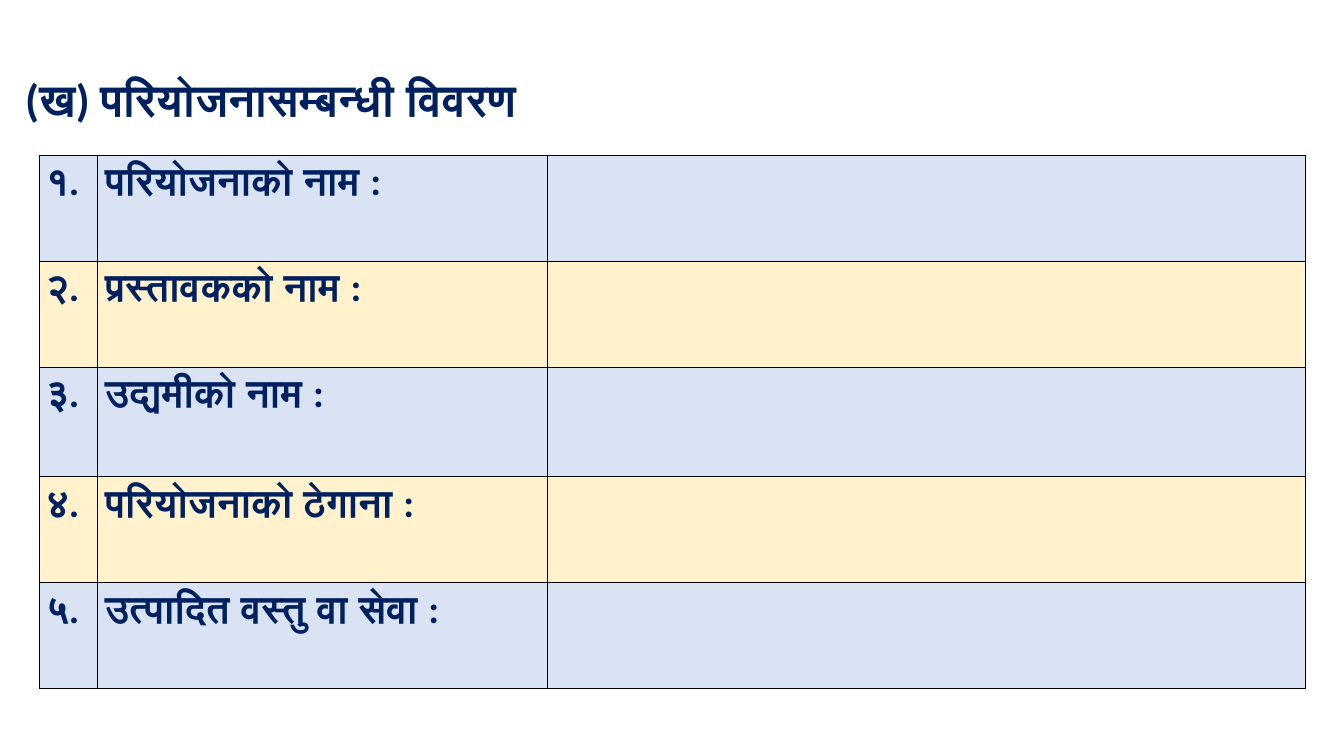
from dataclasses import dataclass

from lxml import etree
from pptx import Presentation
from pptx.dml.color import RGBColor
from pptx.enum import text
from pptx.oxml import ns
from pptx.util import Inches, Pt


@dataclass(frozen=True)
class Theme:
    font: str = "Calibri"
    ink: str = "002060"
    border: str = "000000"
    border_width: float = 0.5
    bands: tuple[str, str] = ("DAE3F3", "FFF2CC")
    title_size: int = 32
    table_size: int = 28


@dataclass(frozen=True)
class DetailRow:
    number: str
    label: str
    height: float = 1.05


THEME = Theme()
TITLE = "(ख) परियोजनासम्बन्धी विवरण"
COLUMN_WIDTHS = (0.58, 4.46, 7.52)
ROWS = (
    DetailRow("१.", "परियोजनाको नाम :"),
    DetailRow("२.", "प्रस्तावकको नाम :"),
    DetailRow("३.", "उद्यमीको नाम :", 1.09),
    DetailRow("४.", "परियोजनाको ठेगाना :"),
    DetailRow("५.", "उत्पादित वस्तु वा सेवा :"),
)


def write_text(frame, words: str, size: int, line_spacing: float) -> None:
    para = frame.paragraphs[0]
    para.alignment = text.PP_ALIGN.LEFT
    para.line_spacing = line_spacing
    span = para.add_run()
    span.text = words
    formats = {"name": THEME.font, "size": Pt(size), "bold": True}
    for name, value in formats.items():
        setattr(span.font, name, value)
    span.font.color.rgb = RGBColor.from_string(THEME.ink)


def add_borders(cell) -> None:
    properties = cell._tc.get_or_add_tcPr()
    for side in ("a:lnL", "a:lnR", "a:lnT", "a:lnB"):
        line = etree.SubElement(properties, ns.qn(side), w=str(Pt(THEME.border_width)))
        fill = etree.SubElement(line, ns.qn("a:solidFill"))
        etree.SubElement(fill, ns.qn("a:srgbClr"), val=THEME.border)


def format_cell(cell, words: str, band: str) -> None:
    margins = {
        "margin_left": Inches(0.07),
        "margin_right": Inches(0.07),
        "margin_top": 0,
        "margin_bottom": 0,
    }
    for name, value in margins.items():
        setattr(cell, name, value)
    add_borders(cell)
    cell.fill.solid()
    cell.fill.fore_color.rgb = RGBColor.from_string(band)
    if words:
        write_text(cell.text_frame, words, THEME.table_size, 1.07)


def add_title(page) -> None:
    title = page.shapes.title
    place = {"left": 0.15, "top": 0.66, "width": 8.34, "height": 0.64}
    for name, value in place.items():
        setattr(title, name, Inches(value))
    frame = title.text_frame
    formats = {
        "word_wrap": True,
        "auto_size": text.MSO_AUTO_SIZE.SHAPE_TO_FIT_TEXT,
        "vertical_anchor": text.MSO_ANCHOR.TOP,
    }
    for name, value in formats.items():
        setattr(frame, name, value)
    write_text(frame, TITLE, THEME.title_size, 1.0)


def add_details_table(page) -> None:
    width = sum(COLUMN_WIDTHS)
    height = sum(row.height for row in ROWS)
    table = page.shapes.add_table(
        len(ROWS), len(COLUMN_WIDTHS),
        Inches(0.39), Inches(1.54), Inches(width), Inches(height),
    ).table
    table.first_row = False
    table.horz_banding = False
    for column, column_width in zip(table.columns, COLUMN_WIDTHS):
        column.width = Inches(column_width)
    for index, detail in enumerate(ROWS):
        row = table.rows[index]
        row.height = Inches(detail.height)
        band = THEME.bands[index % len(THEME.bands)]
        for cell, words in zip(row.cells, (detail.number, detail.label, "")):
            format_cell(cell, words, band)


def main() -> None:
    deck = Presentation()
    deck.slide_width = Inches(13.33)
    deck.slide_height = Inches(7.5)
    # Title-only layout
    page = deck.slides.add_slide(deck.slide_layouts[5])
    # Heading and project details
    add_title(page)
    add_details_table(page)
    deck.save("out.pptx")


if __name__ == "__main__":
    main()
